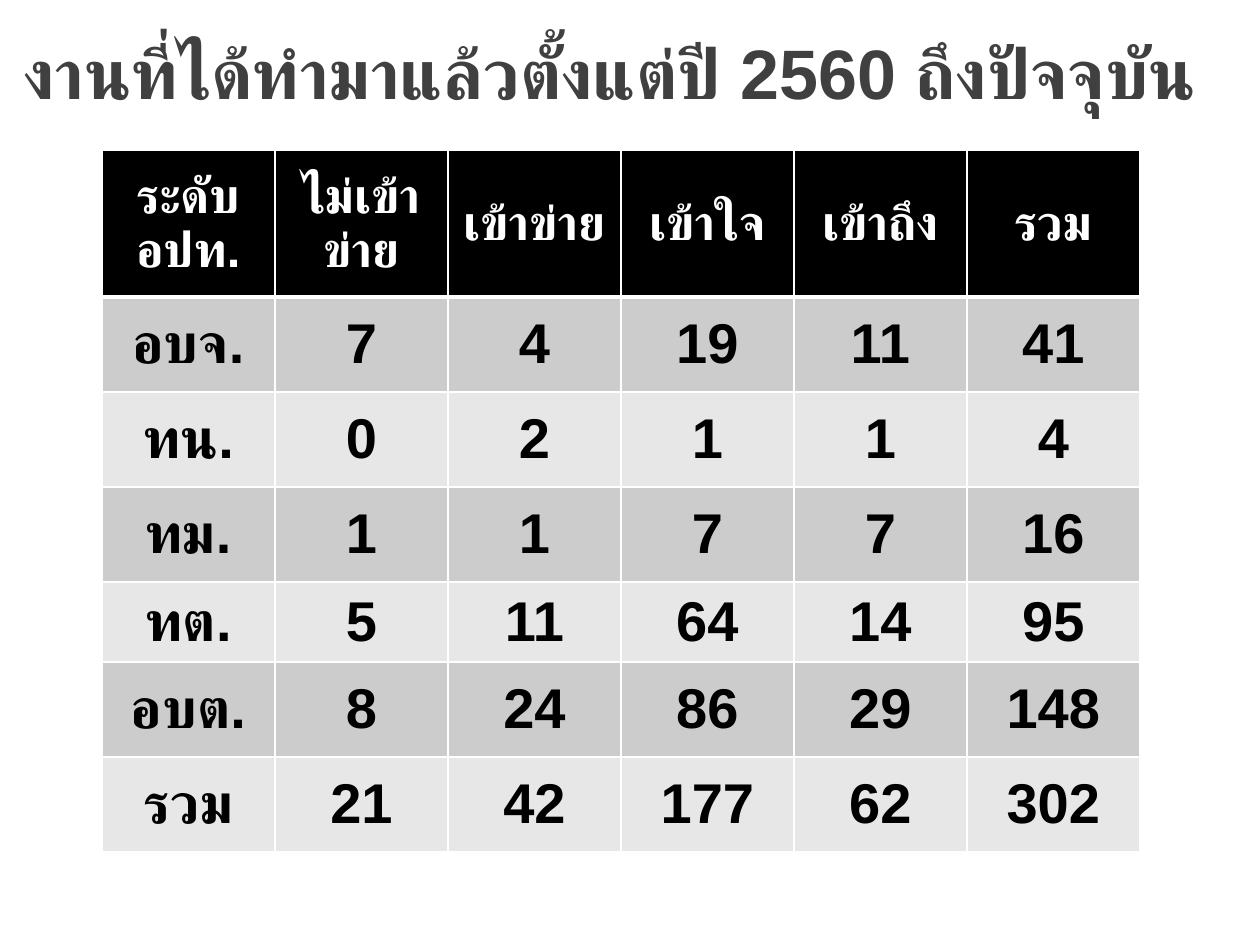
from lxml.etree import SubElement
from pptx import Presentation
from pptx.dml.color import RGBColor
from pptx.enum.text import MSO_ANCHOR, MSO_AUTO_SIZE, PP_ALIGN
from pptx.oxml.ns import qn
from pptx.util import Pt

# Content
TITLE = "งานที่ได้ทำมาแล้วตั้งแต่ปี 2560 ถึงปัจจุบัน"
HEADER = ["ระดับ อปท.", "ไม่เข้าข่าย", "เข้าข่าย", "เข้าใจ", "เข้าถึง", "รวม"]
ROWS = [
    ("อบจ.", 7, 4, 19, 11, 41),
    ("ทน.", 0, 2, 1, 1, 4),
    ("ทม.", 1, 1, 7, 7, 16),
    ("ทต.", 5, 11, 64, 14, 95),
    ("อบต.", 8, 24, 86, 29, 148),
    ("รวม", 21, 42, 177, 62, 302),
]

# Layout in px, 126 to the inch
PX = 914400 // 126
COL_WIDTH = 173
ROW_HEIGHTS = [147, 95, 95, 95, 80, 95, 95]

FONT = "Arial"
WHITE = RGBColor(0xFF, 0xFF, 0xFF)
BLACK = RGBColor(0x00, 0x00, 0x00)
TITLE_GRAY = RGBColor(0x40, 0x40, 0x40)
BANDS = [RGBColor(0xCC, 0xCC, 0xCC), RGBColor(0xE7, 0xE7, 0xE7)]


def px(*values):
    return [v * PX for v in values]


def style(p, size, color, align):
    p.alignment = align
    font = p.font
    font.name, font.size, font.bold = FONT, Pt(size), True
    font.color.rgb = color
    # Thai text takes the complex-script font
    SubElement(font._element, qn("a:cs"), typeface=FONT)


def set_borders(cell, color, bottom):
    tcPr = cell._tc.get_or_add_tcPr()
    widths = {"a:lnL": 1, "a:lnR": 1, "a:lnT": 1, "a:lnB": bottom}
    for i, (tag, width) in enumerate(widths.items()):
        ln = SubElement(tcPr, qn(tag), w=str(Pt(width)))
        fill = SubElement(ln, qn("a:solidFill"))
        SubElement(fill, qn("a:srgbClr"), val=str(color))
        tcPr.insert(i, ln)


prs = Presentation()
prs.slide_width, prs.slide_height = px(1260, 945)
s = prs.slides.add_slide(prs.slide_layouts[5])

# Title
title = s.shapes.title
title.left, title.top, title.width, title.height = px(11, 3, 1260, 147)
tf = title.text_frame
tf.text = TITLE
tf.word_wrap = True
tf.auto_size = MSO_AUTO_SIZE.NONE
tf.vertical_anchor = MSO_ANCHOR.MIDDLE
p = tf.paragraphs[0]
p.line_spacing = 0.9
style(p, 40, TITLE_GRAY, PP_ALIGN.LEFT)

# Table
data = [HEADER, *ROWS]
box = px(102, 150, COL_WIDTH * len(HEADER), sum(ROW_HEIGHTS))
table = s.shapes.add_table(len(data), len(HEADER), *box).table
for col in table.columns:
    col.width = COL_WIDTH * PX
for row, height in zip(table.rows, ROW_HEIGHTS):
    row.height = height * PX

for r, values in enumerate(data):
    is_header = r == 0
    fill = BLACK if is_header else BANDS[(r - 1) % 2]
    for c, value in enumerate(values):
        cell = table.cell(r, c)
        cell.text = str(value)
        cell.vertical_anchor = MSO_ANCHOR.MIDDLE
        cell.fill.solid()
        cell.fill.fore_color.rgb = fill
        set_borders(cell, WHITE, bottom=3 if is_header else 1)
        style(cell.text_frame.paragraphs[0], 28 if is_header else 32,
              WHITE if is_header else BLACK, PP_ALIGN.CENTER)

prs.save("out.pptx")
